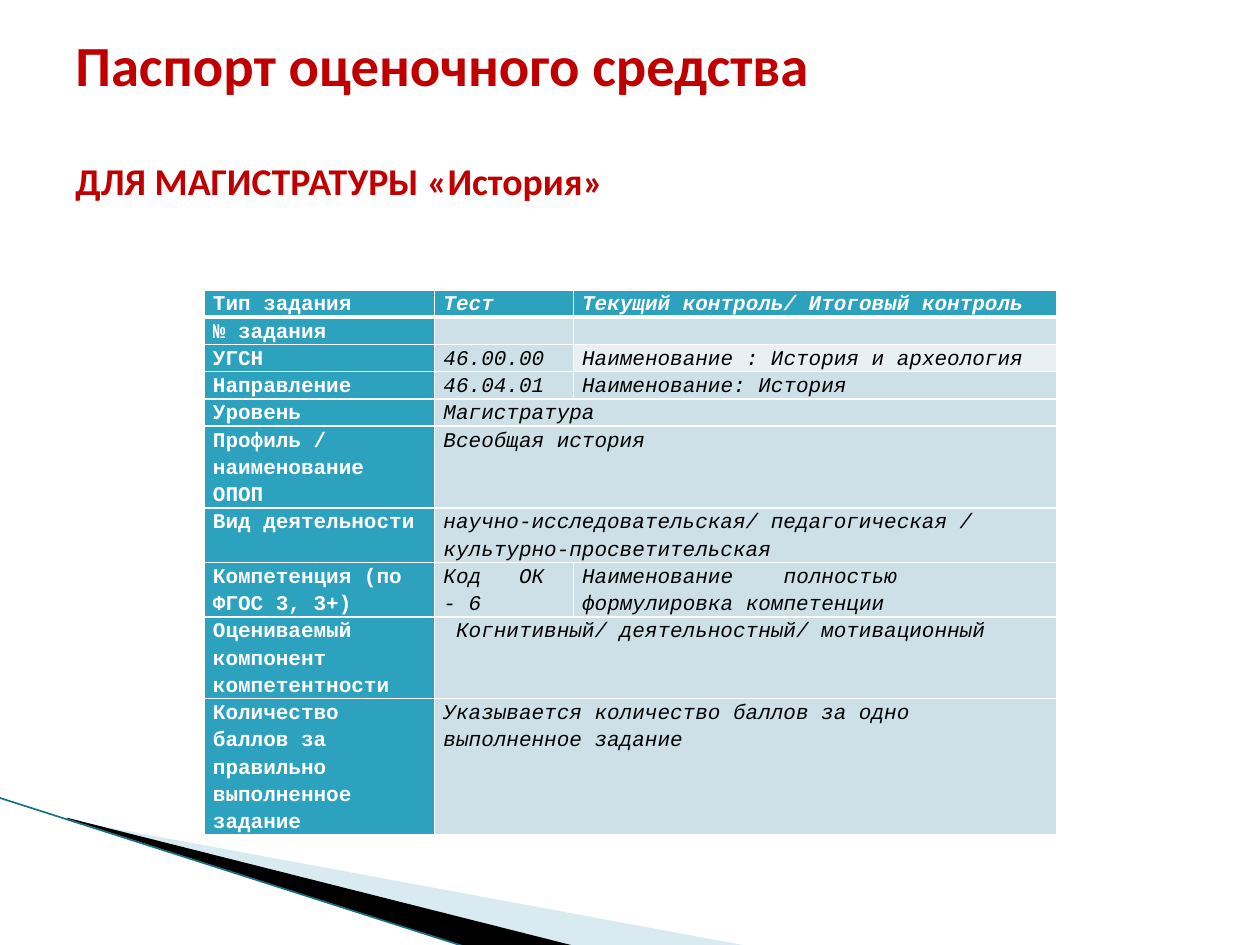
import pptx
import pptx.util
import pptx.dml.color
import pptx.enum.shapes
import pptx.enum.text
import pptx.oxml
import pptx.oxml.ns
from lxml import etree

Inches, Pt = pptx.util.Inches, pptx.util.Pt
RGBColor = pptx.dml.color.RGBColor
qn = pptx.oxml.ns.qn

RED = RGBColor(0xC0, 0x00, 0x00)
WHITE = RGBColor(0xFF, 0xFF, 0xFF)
BLACK = RGBColor(0x00, 0x00, 0x00)
TEAL = RGBColor(0x2D, 0xA2, 0xBF)
DARK_TEAL = RGBColor(0x1B, 0x6F, 0x85)
PALE = RGBColor(0xCD, 0xE0, 0xE8)
PALEST = RGBColor(0xE8, 0xF0, 0xF4)
SKY = RGBColor(0xA0, 0xCB, 0xDC)

COLUMNS = (1.83, 1.1, 3.84)
LINE_HEIGHT = 0.216
# Each row: number of text lines, then its cells; two cells mean the last one spans.
ROWS = (
    (1, ("Тип задания", "Тест", "Текущий контроль/ Итоговый контроль")),
    (1, ("№ задания", "", "")),
    (1, ("УГСН", "46.00.00", "Наименование : История и археология")),
    (1, ("Направление", "46.04.01", "Наименование: История")),
    (1, ("Уровень", "Магистратура")),
    (3, ("Профиль / наименование ОПОП", "Всеобщая история")),
    (2, ("Вид деятельности",
         "научно-исследовательская/ педагогическая / культурно-просветительская")),
    (2, ("Компетенция (по ФГОС 3, 3+)", "Код\tОК - 6",
         "Наименование\tполностью формулировка компетенции")),
    (3, ("Оцениваемый компонент компетентности",
         " Когнитивный/ деятельностный/ мотивационный")),
    (5, ("Количество баллов за правильно выполненное задание",
         "Указывается количество баллов за одно выполненное задание")),
)
TAB_STOPS = {1: 0.6, 2: 1.6}


def add_wedge(slide, points, color, alpha=None):
    """Filled polygon; alpha is its opacity in percent."""
    start, *rest = [(Inches(x), Inches(y)) for x, y in points]
    builder = slide.shapes.build_freeform(*start)
    builder.add_line_segments(rest, close=True)
    s = builder.convert_to_shape()
    s.shadow.inherit = False
    s.line.fill.background()
    s.fill.solid()
    s.fill.fore_color.rgb = color
    if alpha is not None:
        clr = s._element.spPr.find(qn("a:solidFill")).find(qn("a:srgbClr"))
        etree.SubElement(clr, qn("a:alpha")).set("val", str(alpha * 1000))


def add_line(slide, x1, y1, x2, y2, color, width):
    s = slide.shapes.add_connector(
        pptx.enum.shapes.MSO_CONNECTOR.STRAIGHT,
        Inches(x1), Inches(y1), Inches(x2), Inches(y2))
    s.line.color.rgb = color
    s.line.width = Pt(width)
    etree.SubElement(s._element.spPr, qn("a:effectLst"))


def style_font(font, name, size, color, bold, italic=False):
    font.name = name
    font.size = Pt(size)
    font.color.rgb = color
    font.bold = bold
    font.italic = italic


def add_title(slide):
    s = slide.shapes.add_textbox(Inches(0.5), Inches(0.3), Inches(9), Inches(1.25))
    tf = s.text_frame
    tf.word_wrap = True
    tf.vertical_anchor = pptx.enum.text.MSO_ANCHOR.MIDDLE
    p = tf.paragraphs[0]
    r = p.add_run()
    r.text = "Паспорт оценочного средства"
    style_font(r.font, "Calibri", 32.4, RED, True)
    p = tf.add_paragraph()
    p.space_before = Pt(34)
    r = p.add_run()
    r.text = "ДЛЯ МАГИСТРАТУРЫ «История»"
    style_font(r.font, "Calibri", 21.6, RED, True)


def set_borders(cell, top, bottom):
    tcPr = cell._tc.get_or_add_tcPr()
    for side, width in (("L", 1), ("R", 1), ("T", top), ("B", bottom)):
        ln = etree.SubElement(tcPr, qn("a:ln" + side), w=str(Pt(width)))
        fill = etree.SubElement(ln, qn("a:solidFill"))
        etree.SubElement(fill, qn("a:srgbClr"), val=str(WHITE))


def add_tab_stop(p, position):
    tabs = etree.SubElement(p._p.get_or_add_pPr(), qn("a:tabLst"))
    etree.SubElement(tabs, qn("a:tab"), pos=str(Inches(position)), algn="l")


def fill_cell(cell, text, row, col):
    cell.margin_left = cell.margin_right = Inches(0.07)
    cell.margin_top = cell.margin_bottom = 0
    set_borders(cell, 3 if row == 1 else 1, 3 if row == 0 else 1)
    heading = row == 0 or col == 0
    cell.fill.solid()
    cell.fill.fore_color.rgb = (
        TEAL if heading else PALEST if (row, col) == (2, 2) else PALE)
    p = cell.text_frame.paragraphs[0]
    p.line_spacing = 1.15
    if not text:
        # Keeps the empty cell from stretching its row.
        etree.SubElement(p._p, qn("a:endParaRPr"), sz="1200")
        return
    if "\t" in text:
        add_tab_stop(p, TAB_STOPS[col])
    r = p.add_run()
    r.text = text
    style_font(r.font, "Courier New", 12, WHITE if heading else BLACK,
               heading, col > 0)


def add_passport_table(slide):
    height = LINE_HEIGHT * sum(lines for lines, _ in ROWS)
    table = slide.shapes.add_table(
        len(ROWS), len(COLUMNS), Inches(1.62), Inches(2.3),
        Inches(sum(COLUMNS)), Inches(height)).table
    for column, width in zip(table.columns, COLUMNS):
        column.width = Inches(width)
    for i, (lines, texts) in enumerate(ROWS):
        table.rows[i].height = Inches(LINE_HEIGHT * lines)
        for j in range(len(COLUMNS)):
            fill_cell(table.cell(i, j), texts[j] if j < len(texts) else "", i, j)
        if len(texts) == 2:
            table.cell(i, 1).merge(table.cell(i, 2))


def main():
    prs = pptx.Presentation()
    prs.slide_width, prs.slide_height = Inches(10), Inches(7.5)
    slide = prs.slides.add_slide(prs.slide_layouts[6])
    add_wedge(slide, [(0.55, 6.51), (5.95, 7.51), (4.56, 7.51), (0.55, 6.5)], SKY, 40)
    add_wedge(slide, [(0.53, 6.49), (4.57, 7.51), (3.72, 7.52), (0.54, 6.5)], BLACK)
    add_line(slide, -0.01, 6.33, 3.71, 7.52, DARK_TEAL, 0.95)
    add_passport_table(slide)
    add_title(slide)
    prs.save("out.pptx")


if __name__ == "__main__":
    main()
